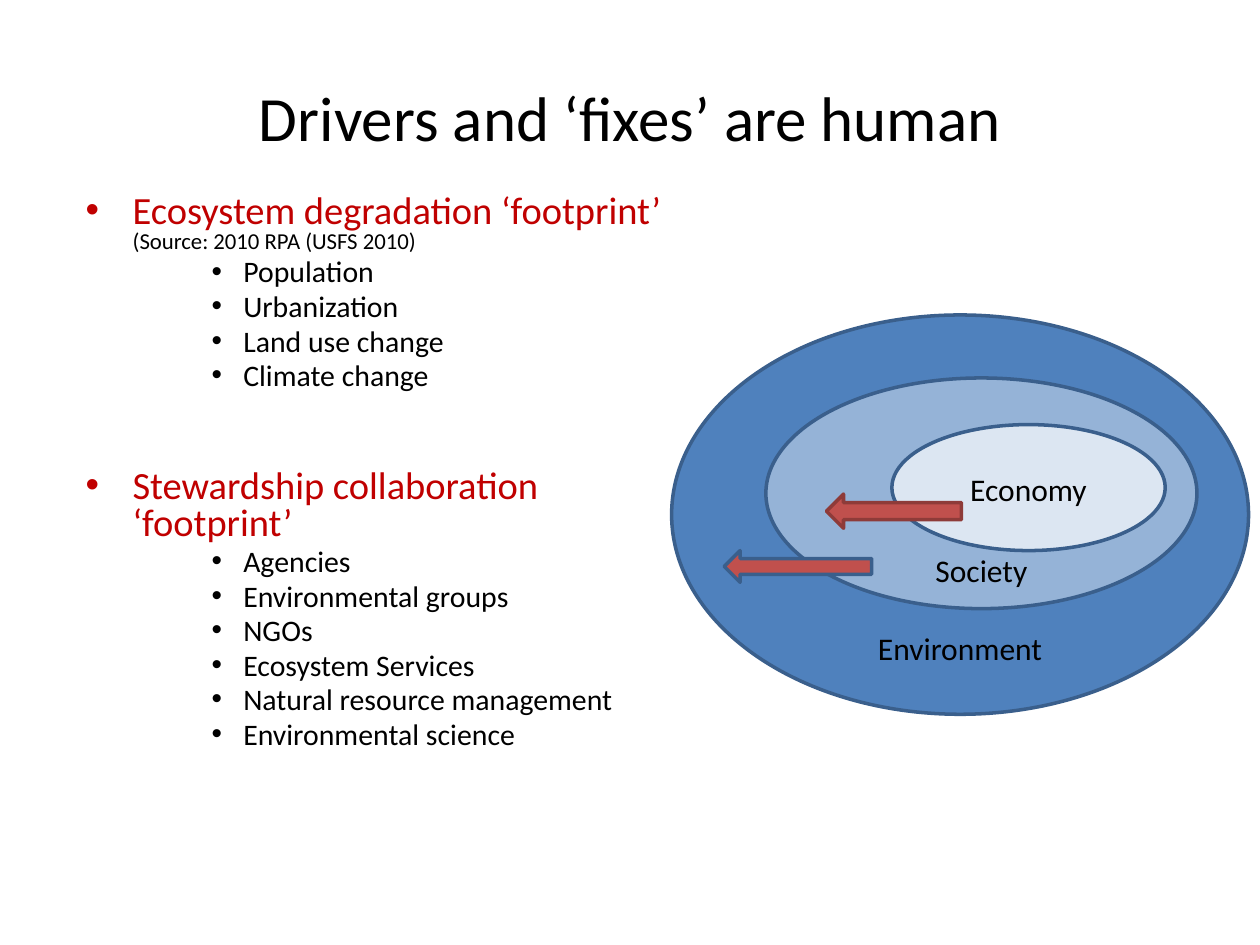
from lxml import etree
from pptx import Presentation
from pptx.dml.color import RGBColor
from pptx.enum.shapes import MSO_SHAPE
from pptx.enum.text import MSO_ANCHOR, MSO_AUTO_SIZE, PP_ALIGN
from pptx.oxml.ns import qn
from pptx.util import Cm, Pt

OVAL, LEFT_ARROW = MSO_SHAPE.OVAL, MSO_SHAPE.LEFT_ARROW
TOP, MIDDLE = MSO_ANCHOR.TOP, MSO_ANCHOR.MIDDLE
CENTER = PP_ALIGN.CENTER
NO_AUTOFIT = MSO_AUTO_SIZE.NONE
BLACK, RED, NAVY = "000000", "C00000", "3A5F8C"


def add_run(para, text, size, color):
    span = para.add_run()
    span.text = text
    span.font.name = "Calibri"
    span.font.size = Pt(size)
    span.font.color.rgb = RGBColor.from_string(color)


def add_filled_shape(kind, place, fill, line):
    shape = page.shapes.add_shape(kind, *[Cm(length) for length in place])
    shape.shadow.inherit = False
    shape.fill.solid()
    shape.fill.fore_color.rgb = RGBColor.from_string(fill)
    shape.line.color.rgb = RGBColor.from_string(line)
    shape.line.width = Pt(2)
    return shape


deck = Presentation()
deck.slide_width, deck.slide_height = Cm(25.4), Cm(19.05)
page = deck.slides.add_slide(deck.slide_layouts[1])

# Title
title = page.shapes.title
title.left, title.top, title.width, title.height = Cm(1.27), Cm(0.76), Cm(22.86), Cm(3.18)
title.text_frame.auto_size = NO_AUTOFIT
title.text_frame.vertical_anchor = MIDDLE
title_para = title.text_frame.paragraphs[0]
title_para.alignment = CENTER
add_run(title_para, "Drivers and ‘fixes’ are human", 36, BLACK)

# Bullet list: level, space before in points, runs of (text, size, colour)
groups = [
    ([("Ecosystem degradation ‘footprint’ ", 22, RED),
      ("(Source: 2010 RPA (USFS 2010)", 13, BLACK)],
     ["Population", "Urbanization", "Land use change", "Climate change"]),
    ([("Stewardship collaboration ‘footprint’", 22, RED)],
     ["Agencies", "Environmental groups", "NGOs", "Ecosystem Services",
      "Natural resource management", "Environmental science"]),
]
rows = []
for number, (heading, items) in enumerate(groups):
    rows.append((0, 44.4 * number, heading))
    rows += [(2, 3.4, [(item, 17, BLACK)]) for item in items]

body = page.placeholders[1]
body.left, body.top, body.width, body.height = Cm(1.47), Cm(3.81), Cm(12.9), Cm(13.21)
body.text_frame.auto_size = NO_AUTOFIT
indents = {0: (0.95, 0.95), 2: (3.18, 0.64)}
for index, (level, space, runs) in enumerate(rows):
    para = body.text_frame.paragraphs[0] if index == 0 else body.text_frame.add_paragraph()
    para.level = level
    margin, hanging = indents[level]
    properties = para._p.get_or_add_pPr()
    properties.set("marL", str(Cm(margin)))
    properties.set("indent", str(-Cm(hanging)))
    etree.SubElement(properties, qn("a:buChar"), char="•")
    para.line_spacing = 0.8
    para.space_before = Pt(space)
    for text, size, color in runs:
        add_run(para, text, size, color)

# Nested ovals: label, place, fill, distance of the label from the text area's top
ovals = [
    ("Environment", (13.54, 6.35, 11.63, 8.05), "4F81BD", 5.16),
    ("Society", (15.44, 7.62, 8.69, 4.65), "95B3D7", 2.81),
    ("Economy", (17.98, 8.56, 5.51, 2.54), "DCE6F2", 0.55),
]
for label, place, fill, label_drop in ovals:
    oval = add_filled_shape(OVAL, place, fill, NAVY)
    frame = oval.text_frame
    frame.vertical_anchor = TOP
    frame.margin_top, frame.margin_bottom = Cm(label_drop), Cm(0)
    frame.paragraphs[0].alignment = CENTER
    add_run(frame.paragraphs[0], label, 18, BLACK)

# Arrows leading outwards
for place, line in [((16.66, 9.96, 2.72, 0.69), "8E3B39"),
                    ((14.6, 11.1, 2.97, 0.64), NAVY)]:
    add_filled_shape(LEFT_ARROW, place, "C0504D", line)

deck.save("out.pptx")
